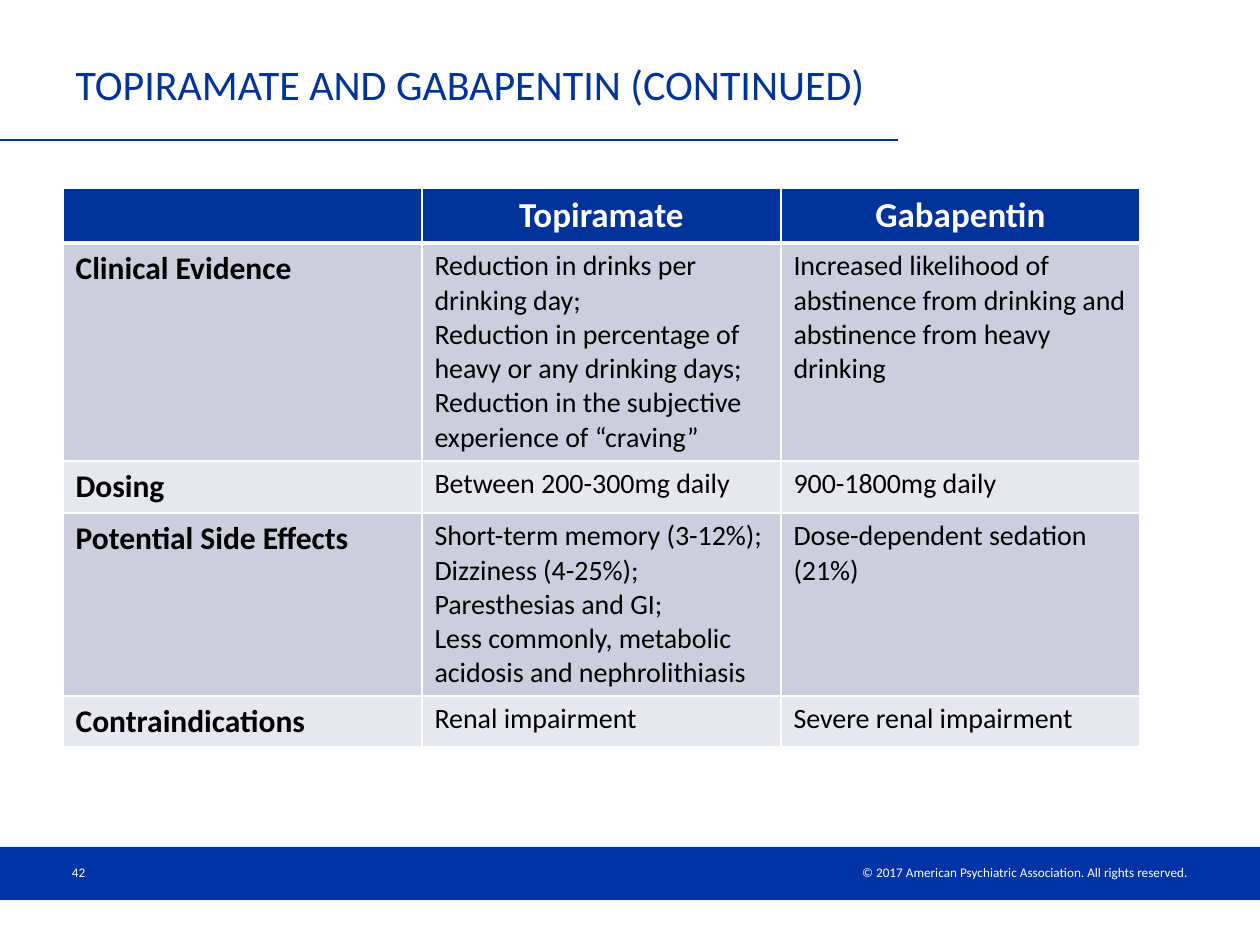
import pptx
import pptx.util
import pptx.dml.color
import pptx.enum.shapes
import pptx.enum.text
from lxml import etree
from pptx.oxml.ns import qn

TITLE = "TOPIRAMATE AND GABAPENTIN (CONTINUED)"
RIGHTS = "© 2017 American Psychiatric Association. All rights reserved."
PAGE = "42"
HEAD = ["", "Topiramate", "Gabapentin"]
# Row label, then the lines of each drug's cell
BODY = [
    ("Clinical Evidence",
     ["Reduction in drinks per drinking day;",
      "Reduction in percentage of heavy or any drinking days;",
      "Reduction in the subjective experience of “craving”"],
     ["Increased likelihood of abstinence from drinking and "
      "abstinence from heavy drinking"]),
    ("Dosing", ["Between 200-300mg daily"], ["900-1800mg daily"]),
    ("Potential Side Effects",
     ["Short-term memory (3-12%);", "Dizziness (4-25%);",
      "Paresthesias and GI;",
      "Less commonly, metabolic acidosis and nephrolithiasis"],
     ["Dose-dependent sedation (21%)"]),
    ("Contraindications", ["Renal impairment"], ["Severe renal impairment"]),
]
HEIGHTS = [55, 218, 52, 183, 51]
COL = 359
BLUE, BAR, WHITE, BLACK = "003399", "0033A3", "FFFFFF", "000000"
BANDS = ["CCCEDE", "E7E8EF"]
FONT = "Calibri"
ALIGN = pptx.enum.text.PP_ALIGN
MIDDLE = pptx.enum.text.MSO_ANCHOR.MIDDLE


def px(count):
    return pptx.util.Emu(round(count * 914400 / 126))


def color(code):
    return pptx.dml.color.RGBColor.from_string(code)


def write(frame, lines, size, code, bold=False, align=ALIGN.LEFT):
    frame.text = "\n".join(lines)
    for para in frame.paragraphs:
        para.alignment = align
        font = para.font
        font.name, font.size, font.bold = FONT, pptx.util.Pt(size), bold
        font.color.rgb = color(code)


def label(slide, box, text, align):
    frame = slide.shapes.add_textbox(*map(px, box)).text_frame
    frame.word_wrap = True
    frame.vertical_anchor = MIDDLE
    write(frame, [text], 7.5, WHITE, align=align)
    return frame


def border(cell, base):
    """Draw white cell edges; base is the bottom width in points."""
    props = cell._tc.get_or_add_tcPr()
    for side, width in (("L", 1), ("R", 1), ("T", 1), ("B", base)):
        line = etree.SubElement(props, qn("a:ln" + side),
                                w=str(pptx.util.Pt(width)))
        fill = etree.SubElement(line, qn("a:solidFill"))
        etree.SubElement(fill, qn("a:srgbClr"), val=WHITE)


def paint(cell, code, base=1):
    border(cell, base)
    cell.fill.solid()
    cell.fill.fore_color.rgb = color(code)


def add_frame(slide):
    """Add the footer bar, its labels, the title and its rule."""
    bar = slide.shapes.add_shape(pptx.enum.shapes.MSO_SHAPE.RECTANGLE,
                                 0, px(847), px(1260), px(53))
    bar.shadow.inherit = False
    bar.fill.solid()
    bar.fill.fore_color.rgb = color(BAR)
    bar.line.fill.background()

    rule = slide.shapes.add_connector(pptx.enum.shapes.MSO_CONNECTOR.STRAIGHT,
                                      0, px(140), px(898), px(140))
    rule.line.color.rgb = color(BLUE)
    rule.line.width = pptx.util.Pt(0.75)
    etree.SubElement(rule._element.spPr, qn("a:effectLst"))

    label(slide, (653, 858, 547, 29), RIGHTS, ALIGN.RIGHT)
    page = label(slide, (63, 847, 294, 50), PAGE, ALIGN.LEFT)
    page.margin_left = page.margin_right = px(9)

    title = slide.shapes.title
    title.left, title.top, title.width, title.height = map(
        px, (63, 43, 835, 81))
    title.text_frame.vertical_anchor = MIDDLE
    write(title.text_frame, [TITLE], 24, BLUE)


def add_grid(slide):
    table = slide.shapes.add_table(
        len(HEIGHTS), len(HEAD), px(63), px(188),
        px(COL * len(HEAD)), px(sum(HEIGHTS))).table
    for col in table.columns:
        col.width = px(COL)
    for row, height in zip(table.rows, HEIGHTS):
        row.height = px(height)

    for c, text in enumerate(HEAD):
        cell = table.cell(0, c)
        paint(cell, BLUE, 3)
        write(cell.text_frame, [text], 20, WHITE, True, ALIGN.CENTER)
    for r, (name, *drugs) in enumerate(BODY, 1):
        for c, lines in enumerate([[name], *drugs]):
            cell = table.cell(r, c)
            paint(cell, BANDS[(r - 1) % 2])
            write(cell.text_frame, lines, 16 if c else 18, BLACK, c == 0)


def main():
    deck = pptx.Presentation()
    deck.slide_width, deck.slide_height = px(1260), px(945)
    slide = deck.slides.add_slide(deck.slide_layouts[5])
    add_frame(slide)
    add_grid(slide)
    deck.save("out.pptx")


if __name__ == "__main__":
    main()
